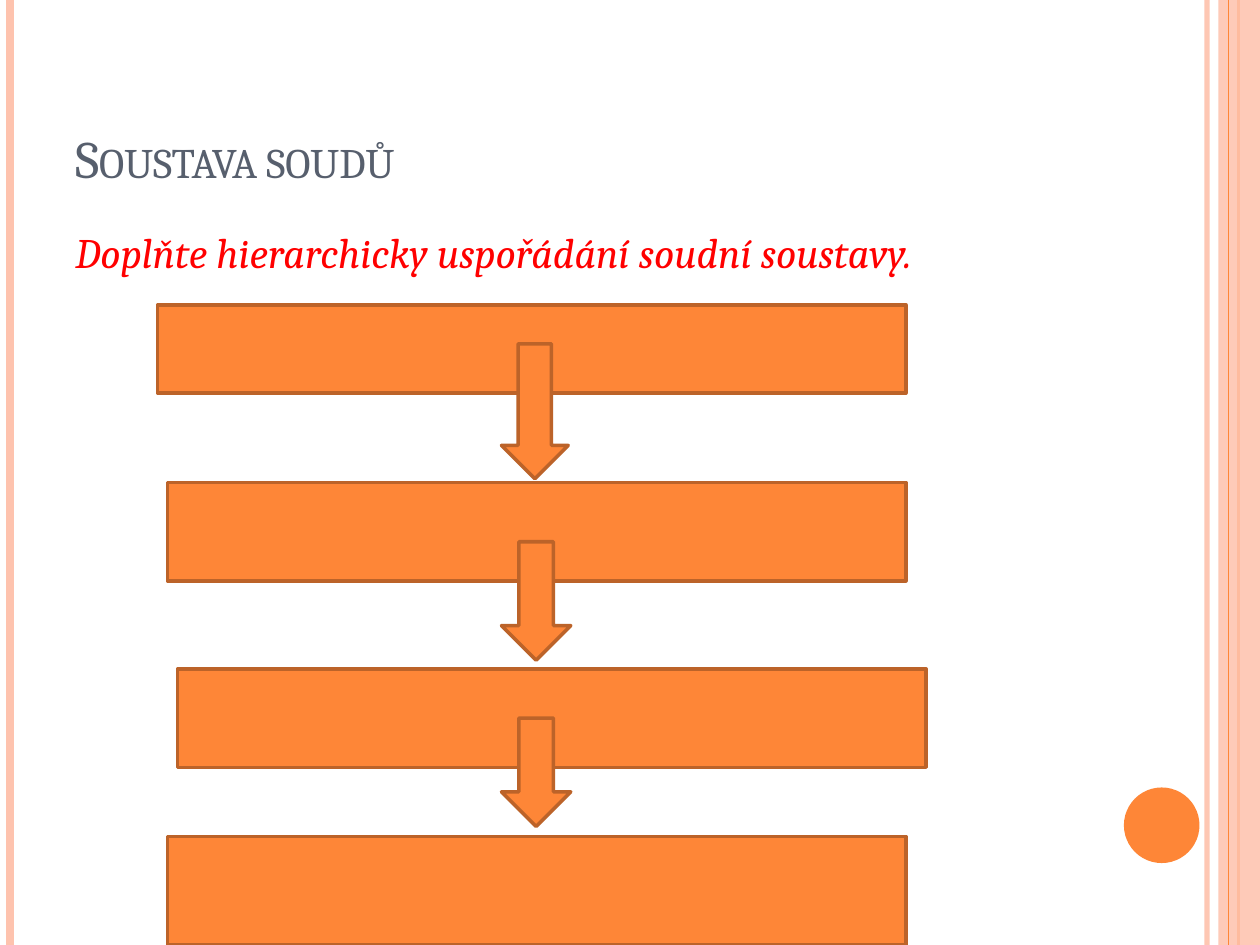
from lxml.etree import SubElement
from pptx import Presentation
from pptx.dml.color import RGBColor
from pptx.enum.shapes import MSO_CONNECTOR, MSO_SHAPE
from pptx.enum.text import MSO_ANCHOR
from pptx.oxml.ns import qn
from pptx.util import Inches, Pt

ORANGE = RGBColor(0xFE, 0x86, 0x37)
BROWN = RGBColor(0xBC, 0x63, 0x29)
PEACH = RGBColor(0xFE, 0xC3, 0xAE)
SLATE = RGBColor(0x57, 0x5F, 0x6D)
RED = RGBColor(0xFF, 0x00, 0x00)

COURT_BOXES = [
    (1.25, 2.42, 5.94, 0.7),
    (1.33, 3.83, 5.86, 0.78),
    (1.41, 5.31, 5.94, 0.78),
    (1.33, 6.64, 5.86, 0.86),
]
ARROWS = [(3.98, 2.73, 0.53, 1.07), (3.98, 4.3, 0.55, 0.94), (3.98, 5.7, 0.55, 0.86)]


def set_opacity(shape, percent):
    """Make the first solid colour of a shape partly transparent."""
    color = next(shape._element.spPr.iter(qn("a:srgbClr")))
    SubElement(color, qn("a:alpha"), val=str(percent * 1000))


def add_stripe(page, left, color, width, opacity=100):
    """Draw a vertical line over the full height of the page."""
    stripe = page.shapes.add_connector(
        MSO_CONNECTOR.STRAIGHT, Inches(left), 0, Inches(left), Inches(7.5))
    stripe.line.color.rgb = color
    stripe.line.width = Pt(width)
    if opacity < 100:
        set_opacity(stripe, opacity)
    SubElement(stripe._element.spPr, qn("a:effectLst"))


def add_figure(page, kind, bounds, fill, outline=None, opacity=100):
    """Draw a filled preset shape, outlined if a colour is given."""
    figure = page.shapes.add_shape(kind, *map(Inches, bounds))
    figure.shadow.inherit = False
    figure.fill.solid()
    figure.fill.fore_color.rgb = fill
    if opacity < 100:
        set_opacity(figure, opacity)
    if outline is None:
        figure.line.fill.background()
    else:
        figure.line.color.rgb = outline
        figure.line.width = Pt(2)


def add_text(page, bounds, text, size, color, anchor=MSO_ANCHOR.TOP):
    """Add one line of text and return its paragraph."""
    box = page.shapes.add_textbox(*map(Inches, bounds))
    frame = box.text_frame
    frame.word_wrap = True
    frame.vertical_anchor = anchor
    frame.text = text
    paragraph = frame.paragraphs[0]
    font = paragraph.runs[0].font
    font.name = "Cambria"
    font.size = Pt(size)
    font.color.rgb = color
    return paragraph


def add_decoration(page):
    """Draw the stripes at the page edges and the disc."""
    add_stripe(page, 9.58, PEACH, 3, 93)
    add_stripe(page, 0.08, PEACH, 4.5)
    add_stripe(page, 9.83, ORANGE, 1.5)
    add_figure(page, MSO_SHAPE.RECTANGLE, (9.67, 0, 0.33, 7.5), PEACH, opacity=87)
    add_stripe(page, 9.75, ORANGE, 0.75)
    add_figure(page, MSO_SHAPE.OVAL, (8.92, 6.25, 0.6, 0.6), ORANGE)


def add_heading(page):
    """Add the title in small capitals and the instruction."""
    title = add_text(page, (0.5, 0.3, 8.17, 1.25), "Soustava soudů", 30, SLATE,
                     MSO_ANCHOR.BOTTOM)
    title.runs[0]._r.get_or_add_rPr().set("cap", "small")
    task = add_text(page, (0.5, 1.75, 8.17, 5.33),
                    "Doplňte hierarchicky uspořádání soudní soustavy.", 24, RED)
    task.space_before = Pt(6)
    task.runs[0].font.italic = True


def main():
    """Build the slide and save it."""
    deck = Presentation()
    deck.slide_width, deck.slide_height = Inches(10), Inches(7.5)
    page = deck.slides.add_slide(deck.slide_layouts[6])
    add_decoration(page)
    add_heading(page)
    for bounds in COURT_BOXES:
        add_figure(page, MSO_SHAPE.RECTANGLE, bounds, ORANGE, BROWN)
    for bounds in ARROWS:
        add_figure(page, MSO_SHAPE.DOWN_ARROW, bounds, ORANGE, BROWN)
    deck.save("out.pptx")


if __name__ == "__main__":
    main()
